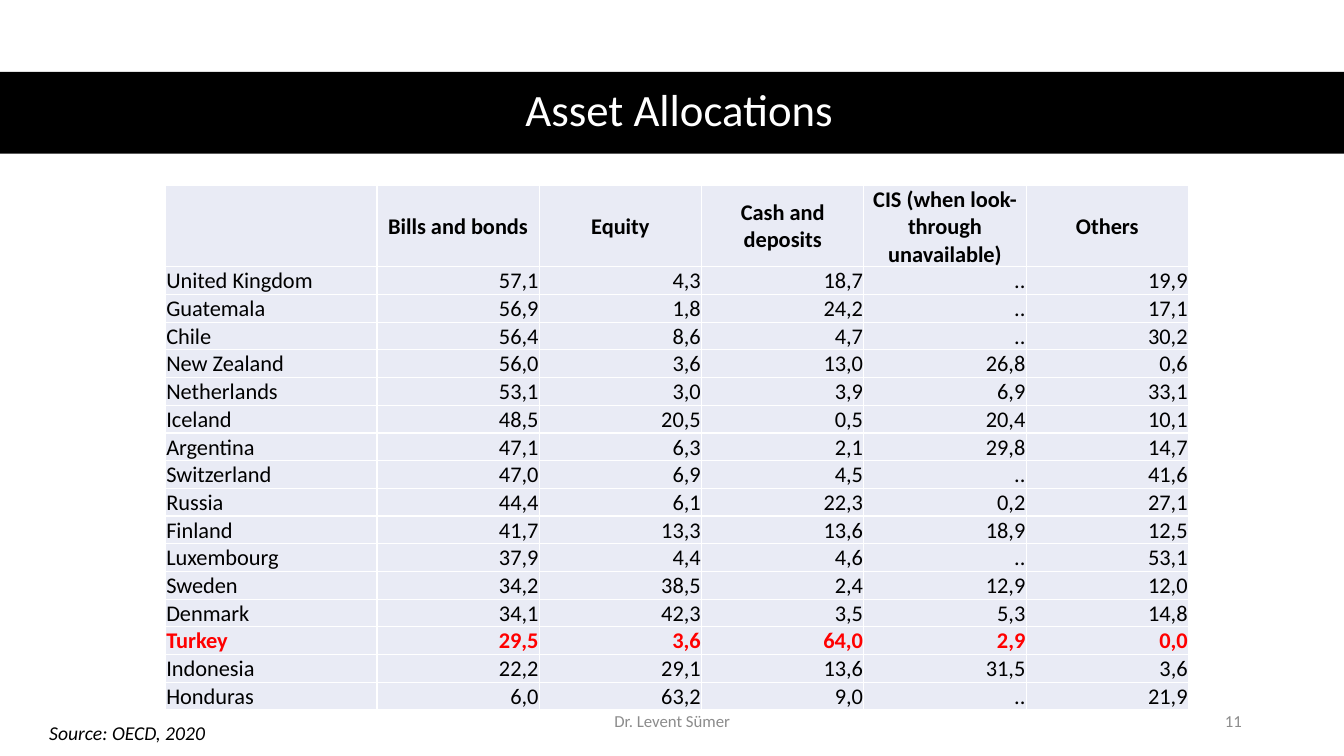
"""Build the Asset Allocations slide with its table of countries."""
from pptx import Presentation
from pptx.dml.color import RGBColor
from pptx.enum.shapes import MSO_SHAPE
from pptx.enum.text import MSO_ANCHOR, PP_ALIGN
from pptx.util import Cm, Pt

LEFT, CENTER, RIGHT = PP_ALIGN.LEFT, PP_ALIGN.CENTER, PP_ALIGN.RIGHT
TOP, MIDDLE, BOTTOM = MSO_ANCHOR.TOP, MSO_ANCHOR.MIDDLE, MSO_ANCHOR.BOTTOM
RECTANGLE = MSO_SHAPE.RECTANGLE

BLACK = RGBColor(0x00, 0x00, 0x00)
WHITE = RGBColor(0xFF, 0xFF, 0xFF)
GRAY = RGBColor(0x8C, 0x8C, 0x8C)
RED = RGBColor(0xFF, 0x00, 0x00)
PALE_BLUE = RGBColor(0xE9, 0xEB, 0xF5)

HEADERS = ["", "Bills and bonds", "Equity", "Cash and deposits",
           "CIS (when look-through unavailable)", "Others"]
ALLOCATIONS = [
    ["United Kingdom", "57,1", "4,3", "18,7", "..", "19,9"],
    ["Guatemala", "56,9", "1,8", "24,2", "..", "17,1"],
    ["Chile", "56,4", "8,6", "4,7", "..", "30,2"],
    ["New Zealand", "56,0", "3,6", "13,0", "26,8", "0,6"],
    ["Netherlands", "53,1", "3,0", "3,9", "6,9", "33,1"],
    ["Iceland", "48,5", "20,5", "0,5", "20,4", "10,1"],
    ["Argentina", "47,1", "6,3", "2,1", "29,8", "14,7"],
    ["Switzerland", "47,0", "6,9", "4,5", "..", "41,6"],
    ["Russia", "44,4", "6,1", "22,3", "0,2", "27,1"],
    ["Finland", "41,7", "13,3", "13,6", "18,9", "12,5"],
    ["Luxembourg", "37,9", "4,4", "4,6", "..", "53,1"],
    ["Sweden", "34,2", "38,5", "2,4", "12,9", "12,0"],
    ["Denmark", "34,1", "42,3", "3,5", "5,3", "14,8"],
    ["Turkey", "29,5", "3,6", "64,0", "2,9", "0,0"],
    ["Indonesia", "22,2", "29,1", "13,6", "31,5", "3,6"],
    ["Honduras", "6,0", "63,2", "9,0", "..", "21,9"],
]


def write(tf, text, size=16, color=BLACK, align=LEFT, bold=False, italic=False):
    p = tf.paragraphs[0]
    p.alignment = align
    r = p.add_run()
    r.text = text
    r.font.name = "Calibri"
    r.font.size = Pt(size)
    r.font.color.rgb = color
    r.font.bold = bold
    r.font.italic = italic
    return p


def add_text(s, text, left, top, width, height, anchor=MIDDLE, **style):
    tf = s.shapes.add_textbox(Cm(left), Cm(top), Cm(width), Cm(height)).text_frame
    tf.word_wrap = True
    tf.vertical_anchor = anchor
    return write(tf, text, **style)


prs = Presentation()
prs.slide_width, prs.slide_height = Cm(33.87), Cm(19.05)
s = prs.slides.add_slide(prs.slide_layouts[6])

band = s.shapes.add_shape(RECTANGLE, 0, Cm(1.81), prs.slide_width, Cm(2.06))
band.shadow.inherit = False
band.fill.solid()
band.fill.fore_color.rgb = BLACK
band.line.fill.background()

p = add_text(s, "Asset Allocations", 1.55, 1.78, 31.14, 2.06,
             size=32, color=WHITE, align=CENTER)
p.line_spacing = 0.9

for text, left, width, align in [("Dr. Levent Sümer", 11.23, 11.43, CENTER),
                                 ("11", 23.93, 7.62, RIGHT)]:
    p = add_text(s, text, left, 17.65, width, 1.02, size=12, color=GRAY, align=align)
    p.space_after = Pt(6)

rows = [HEADERS] + ALLOCATIONS
table = s.shapes.add_table(len(rows), len(HEADERS), Cm(4.17), Cm(4.67),
                           Cm(25.8), Cm(11.54)).table
table.first_row = False
table.horz_banding = False
for j, column in enumerate(table.columns):
    column.width = Cm(4.09) if j else Cm(5.33)

for i, values in enumerate(rows):
    table.rows[i].height = Cm(0.61) if i else Cm(1.78)
    highlighted = values[0] == "Turkey"
    for j, value in enumerate(values):
        cell = table.cell(i, j)
        cell.fill.solid()
        cell.fill.fore_color.rgb = PALE_BLUE
        cell.margin_left = cell.margin_right = cell.margin_top = Cm(0.02)
        cell.margin_bottom = 0
        cell.vertical_anchor = BOTTOM if i else MIDDLE
        if value:
            align = CENTER if i == 0 else RIGHT if j else LEFT
            write(cell.text_frame, value, align=align, bold=i == 0 or highlighted,
                  color=RED if highlighted else BLACK)

add_text(s, "Source: OECD, 2020", 0.99, 18.03, 6.4, 0.86, anchor=TOP,
         size=14, italic=True)

prs.save("out.pptx")
